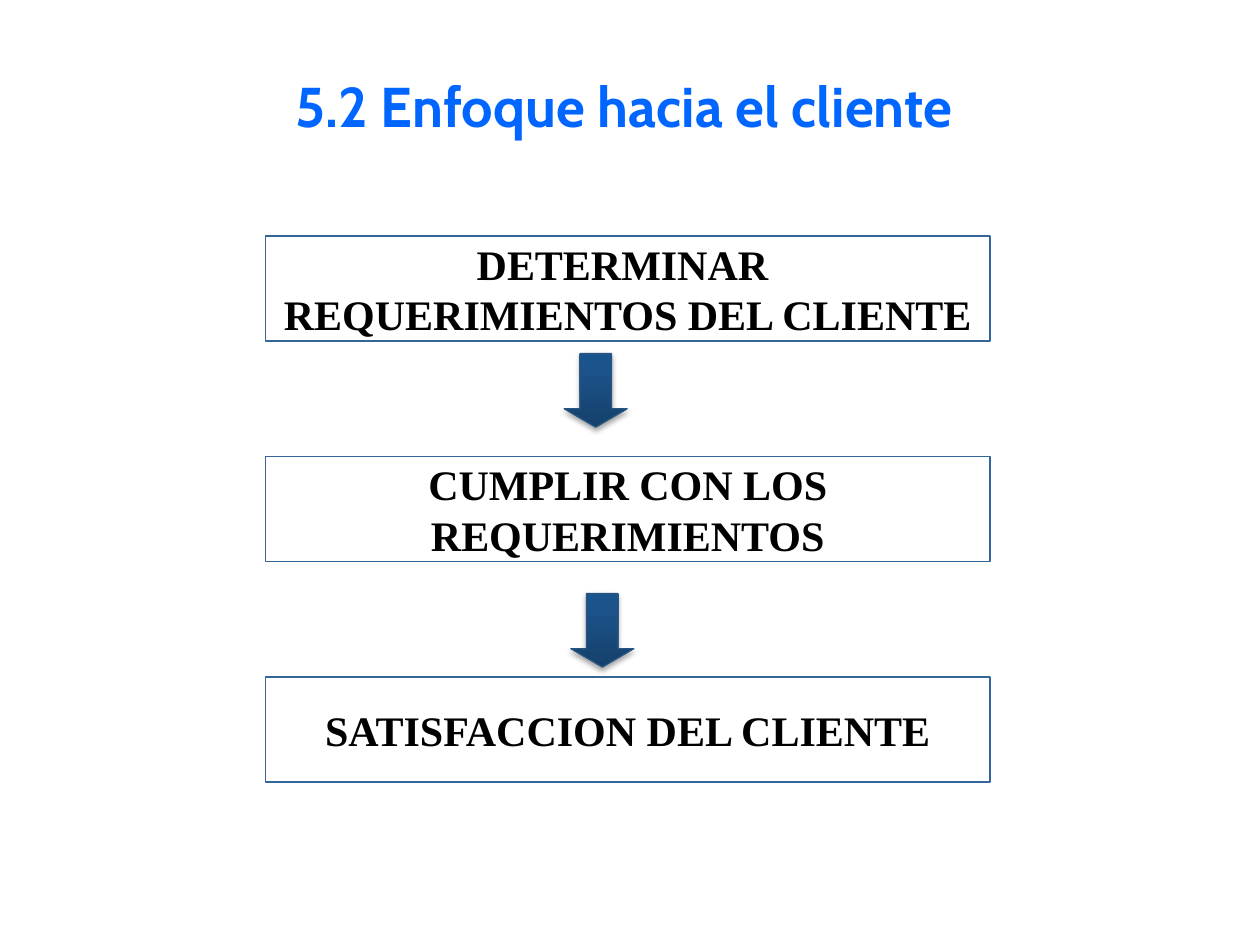
from lxml import etree
from pptx import Presentation
from pptx.dml.color import RGBColor
from pptx.enum.shapes import MSO_SHAPE
from pptx.enum.text import MSO_ANCHOR, PP_ALIGN
from pptx.oxml import parse_xml
from pptx.oxml.ns import nsdecls, qn
from pptx.util import Pt

CENTER, MIDDLE = PP_ALIGN.CENTER, MSO_ANCHOR.MIDDLE
RECT, DOWN_ARROW = MSO_SHAPE.RECTANGLE, MSO_SHAPE.DOWN_ARROW

BLUE = RGBColor(0x00, 0x66, 0xFF)
BLACK = RGBColor(0x00, 0x00, 0x00)
WHITE = RGBColor(0xFF, 0xFF, 0xFF)
BOX_LINE = RGBColor(0x33, 0x66, 0x99)
ARROW_LINE = RGBColor(0x27, 0x54, 0x81)
ARROW_STOPS = [(0, RGBColor(0x15, 0x40, 0x6B)),
               (80, RGBColor(0x1C, 0x53, 0x8B)),
               (100, RGBColor(0x1A, 0x54, 0x8E))]

# Content: the trailing spaces count in the centring
TITLE = "5.2 Enfoque hacia el cliente"
STEPS = [
    ["DETERMINAR ", "REQUERIMIENTOS DEL CLIENTE"],
    ["CUMPLIR CON LOS", "REQUERIMIENTOS"],
    ["SATISFACCION DEL CLIENTE"],
]
ARROWS = [(322.4, 202.1), (326.2, 339.2)]  # left, top

# Layout and formats
BOX_LEFT, BOX_TOP, BOX_W, BOX_H, BOX_STEP = 151.7, 134.9, 414, 60, 126
ARROW_W, ARROW_H = 36, 42
TITLE_FONT = dict(name="Cabin", size=Pt(32), bold=True)
STEP_FONT = dict(name="Times New Roman", size=Pt(24), bold=True)


def add_run(p, text, font, color):
    r = p.add_run()
    r.text = text
    for key, value in font.items():
        setattr(r.font, key, value)
    r.font.color.rgb = color


def add_shape(s, kind, box, line):
    sp = s.shapes.add_shape(kind, *map(Pt, box))
    sp.shadow.inherit = False
    sp.line.color.rgb = line
    sp.line.width = Pt(0.75)
    return sp


def add_step(s, box, lines):
    sp = add_shape(s, RECT, box, BOX_LINE)
    sp.fill.solid()
    sp.fill.fore_color.rgb = WHITE
    tf = sp.text_frame
    tf.word_wrap = False
    tf.vertical_anchor = MIDDLE
    for i, line in enumerate(lines):
        p = tf.add_paragraph() if i else tf.paragraphs[0]
        p.alignment = CENTER
        add_run(p, line, STEP_FONT, BLACK)


def add_arrow(s, box):
    sp = add_shape(s, DOWN_ARROW, box, ARROW_LINE)
    sp.adjustments[0], sp.adjustments[1] = 0.5, 0.292
    # Three-stop gradient, dark at the bottom
    sp.fill.gradient()
    sp.fill.gradient_angle = 90
    stops = sp._element.spPr.find(".//" + qn("a:gsLst"))
    for stop in list(stops):
        stops.remove(stop)
    for pos, color in ARROW_STOPS:
        stop = etree.SubElement(stops, qn("a:gs"), pos=str(pos * 1000))
        etree.SubElement(stop, qn("a:srgbClr"), val=str(color))
    # Soft shadow below
    sp._element.spPr.find(qn("a:effectLst")).append(parse_xml(
        f'<a:outerShdw {nsdecls("a")} blurRad="{Pt(3.1)}" dist="{Pt(1.8)}" '
        'dir="5400000" rotWithShape="0"><a:srgbClr val="000000">'
        '<a:alpha val="35000"/></a:srgbClr></a:outerShdw>'))


prs = Presentation()
prs.slide_width, prs.slide_height = Pt(720), Pt(540)
s = prs.slides.add_slide(prs.slide_layouts[6])

# Title
tf = s.shapes.add_textbox(Pt(54), Pt(41.8), Pt(612), Pt(36)).text_frame
tf.word_wrap = True
tf.vertical_anchor = MIDDLE
p = tf.paragraphs[0]
p.alignment = CENTER
add_run(p, TITLE, TITLE_FONT, BLUE)
add_run(p, " ", {**TITLE_FONT, "size": Pt(28)}, BLUE)

# Steps from top to bottom
for i, lines in enumerate(STEPS):
    add_step(s, (BOX_LEFT, BOX_TOP + i * BOX_STEP, BOX_W, BOX_H), lines)

# Arrows between the steps
for left, top in ARROWS:
    add_arrow(s, (left, top, ARROW_W, ARROW_H))

prs.save("out.pptx")
